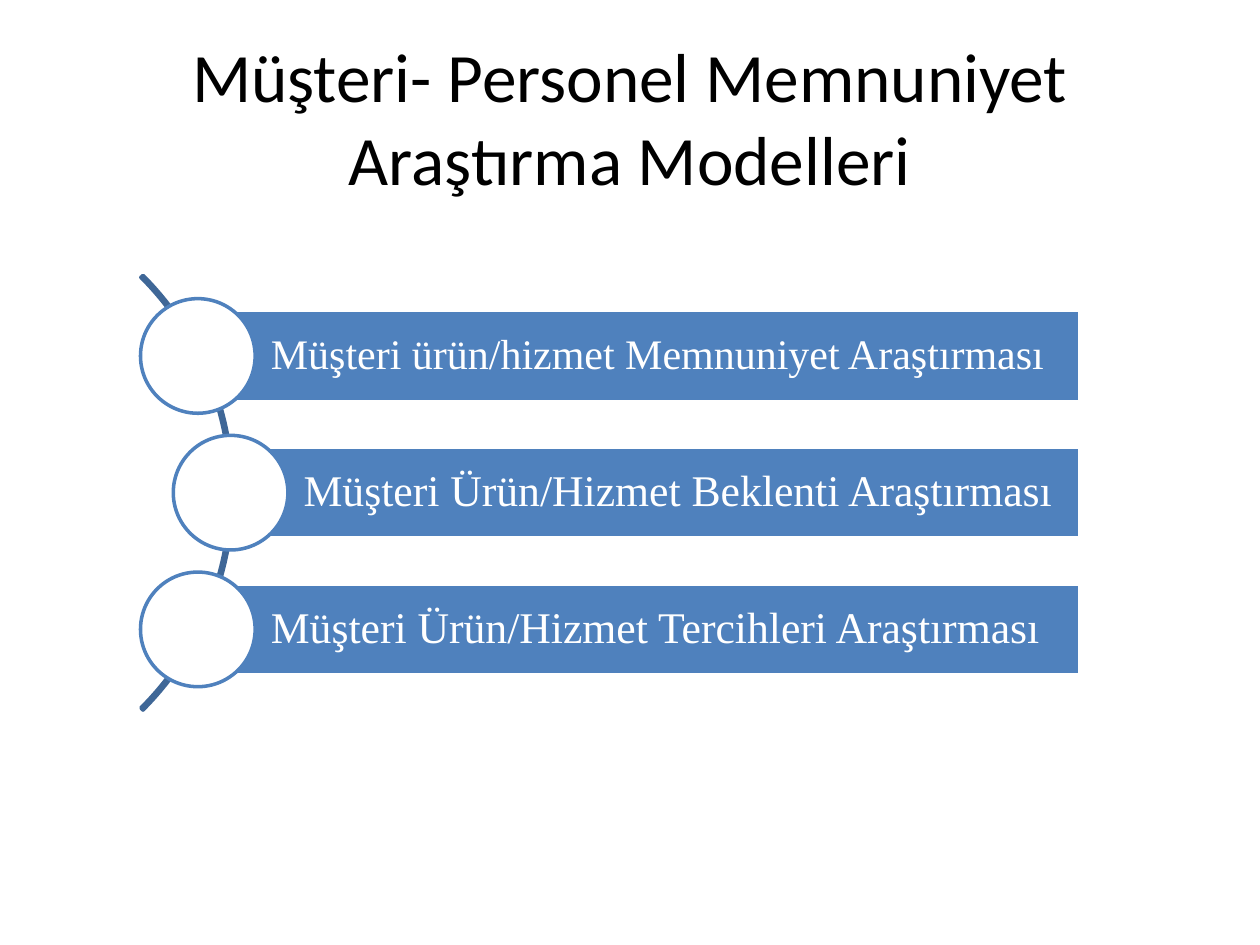
import pptx
import pptx.dml.color
import pptx.enum.shapes
import pptx.enum.text
import pptx.util

SHAPES = pptx.enum.shapes.MSO_SHAPE
ALIGN = pptx.enum.text.PP_ALIGN
INCH = pptx.util.Inches

THEME = {
    "ink": "000000", "paper": "FFFFFF", "bar": "4F81BD", "arc": "3F6797",
    "title_font": "Calibri", "label_font": "Times New Roman",
    "title_size": 39.6, "label_size": 25, "long_label_size": 24, "line": 2,
}


def write(frame, text, *, font, size, color, align, spacing=None, insets=None):
    frame.word_wrap = True
    frame.auto_size = pptx.enum.text.MSO_AUTO_SIZE.NONE
    frame.vertical_anchor = pptx.enum.text.MSO_ANCHOR.MIDDLE
    if insets:
        (frame.margin_left, frame.margin_top,
         frame.margin_right, frame.margin_bottom) = map(INCH, insets)
    paragraph = frame.paragraphs[0]
    paragraph.alignment = align
    paragraph.line_spacing = spacing
    run = paragraph.add_run()
    run.text = text
    run.font.name = font
    run.font.size = pptx.util.Pt(size)
    run.font.color.rgb = pptx.dml.color.RGBColor.from_string(THEME[color])


def add_outlined(preset, left, top, width, height, line, fill=None):
    shape = slide.shapes.add_shape(preset, *map(INCH, (left, top, width, height)))
    shape.shadow.inherit = False
    if fill:
        shape.fill.solid()
        shape.fill.fore_color.rgb = pptx.dml.color.RGBColor.from_string(THEME[fill])
    else:
        shape.fill.background()
    shape.line.color.rgb = pptx.dml.color.RGBColor.from_string(THEME[line])
    shape.line.width = pptx.util.Pt(THEME["line"])
    return shape


presentation = pptx.Presentation()
presentation.slide_width, presentation.slide_height = INCH(10), INCH(7.5)
slide = presentation.slides.add_slide(presentation.slide_layouts[5])

title = slide.shapes.title
title.left, title.top, title.width, title.height = map(INCH, (0.5, 0.3, 9, 1.25))
write(title.text_frame, "Müşteri- Personel Memnuniyet Araştırma Modelleri",
      font=THEME["title_font"], size=THEME["title_size"], color="ink",
      align=ALIGN.CENTER)

# Rows are evenly spaced about the middle of the arc.
middle, row_pitch = 3.91, 1.085
bar_right, bar_height = 8.57, 0.72
circle_size, arc_size = 0.91, 4.88
outer_column, middle_column = 1.57, 1.83

arc = add_outlined(SHAPES.BLOCK_ARC, -3.03, middle - arc_size / 2,
                   arc_size, arc_size, "arc")
for index, value in enumerate((189, 27, 0.005)):
    arc.adjustments[index] = value

models = [
    ("Müşteri ürün/hizmet Memnuniyet Araştırması", outer_column, "long_label_size"),
    ("Müşteri Ürün/Hizmet Beklenti Araştırması", middle_column, "label_size"),
    ("Müşteri Ürün/Hizmet Tercihleri Araştırması", outer_column, "label_size"),
]
for row, (label, column, size) in enumerate(models):
    center = middle + (row - 1) * row_pitch
    bar = add_outlined(SHAPES.RECTANGLE, column, center - bar_height / 2,
                       bar_right - column, bar_height, "paper", "bar")
    write(bar.text_frame, label, font=THEME["label_font"], size=THEME[size],
          color="paper", align=ALIGN.LEFT, spacing=0.9,
          insets=(0.58, 0.07, 0.07, 0.07))
    add_outlined(SHAPES.OVAL, column - circle_size / 2, center - circle_size / 2,
                 circle_size, circle_size, "bar", "paper")

presentation.save("out.pptx")
